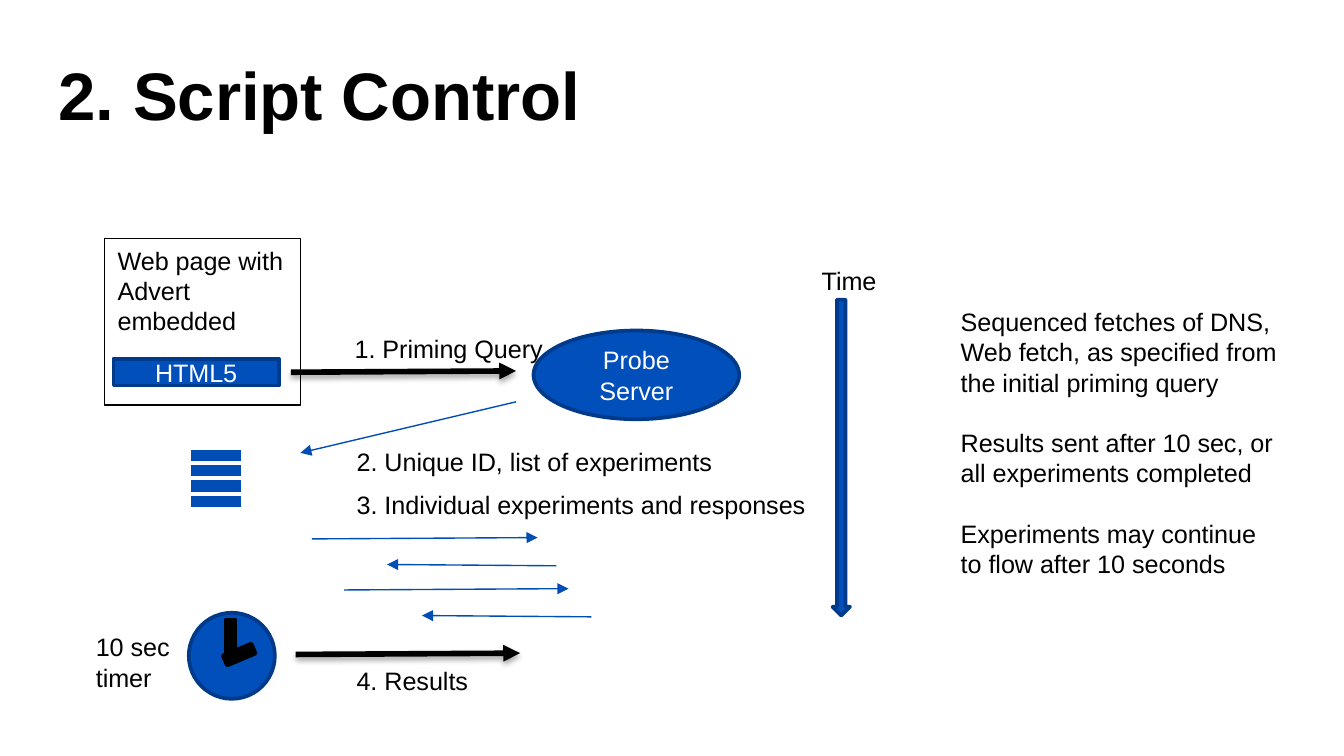
from dataclasses import dataclass

from lxml import etree
from pptx import Presentation
from pptx.dml.color import RGBColor
from pptx.enum.shapes import MSO_CONNECTOR, MSO_SHAPE
from pptx.enum.text import MSO_ANCHOR, PP_ALIGN
from pptx.oxml.ns import qn
from pptx.util import Inches, Pt

LINE = MSO_CONNECTOR.STRAIGHT
RECTANGLE, OVAL, DOWN_ARROW = MSO_SHAPE.RECTANGLE, MSO_SHAPE.OVAL, MSO_SHAPE.DOWN_ARROW
TOP, MIDDLE = MSO_ANCHOR.TOP, MSO_ANCHOR.MIDDLE
LEFT, CENTER = PP_ALIGN.LEFT, PP_ALIGN.CENTER

BLACK = RGBColor(0x00, 0x00, 0x00)
WHITE = RGBColor(0xFF, 0xFF, 0xFF)
BLUE = RGBColor(0x00, 0x4F, 0xBA)
NAVY = RGBColor(0x00, 0x3A, 0x8A)
ARROW_BLUE = RGBColor(0x00, 0x4D, 0xB6)

COLUMNS, ROWS = 100, 56.25
CELL = Inches(0.1)
FONT = "Arial"
BODY_SIZE, BODY_PITCH = 13.5, 16.2


@dataclass
class Area:
    column: float
    row: float
    columns: float
    rows: float

    def lengths(self) -> list[int]:
        return [round(value * CELL) for value in (self.column, self.row, self.columns, self.rows)]


@dataclass
class Label:
    area: Area
    lines: list[str]
    wrap: bool = False
    gap: float = 0


@dataclass
class Arrow:
    start: tuple[float, float]
    end: tuple[float, float]
    heavy: bool = False


LABELS = [
    Label(Area(25.4, 24.3, 16.2, 3.3), ["1. Priming Query"]),
    Label(Area(25.55, 32.7, 28.8, 3.3), ["2. Unique ID, list of experiments"]),
    Label(Area(25.55, 35.9, 35.9, 3.3), ["3. Individual experiments and responses"]),
    Label(Area(25.55, 49, 10.4, 3.3), ["4. Results"]),
    Label(Area(6.15, 46.5, 7.6, 5.6), ["10 sec", "timer"]),
    Label(Area(60.15, 19.25, 6.2, 3.3), ["Time"]),
    Label(Area(70.5, 22.3, 25.6, 23.7), [
        "Sequenced fetches of DNS, Web fetch, as specified from the initial priming query",
        "Results sent after 10 sec, or all experiments completed",
        "Experiments may continue to flow after 10 seconds",
    ], True, BODY_PITCH),
]

ARROWS = [
    Arrow((21.65, 27.7), (38.4, 27.6), True),
    Arrow((38.4, 29.9), (22.35, 33.7)),
    Arrow((23.2, 40.1), (40, 40)),
    Arrow((41.4, 42.1), (28.8, 42)),
    Arrow((25.6, 43.9), (42.3, 43.8)),
    Arrow((44, 45.9), (31.4, 45.8)),
    Arrow((22, 48.7), (38.7, 48.6), True),
]


def write(shape, lines: list[str], color=BLACK, align=LEFT, anchor=TOP,
          wrap=True, gap=0.0, size=BODY_SIZE, bold=False) -> None:
    frame = shape.text_frame
    frame.word_wrap = wrap
    frame.vertical_anchor = anchor
    for index, line in enumerate(lines):
        para = frame.add_paragraph() if index else frame.paragraphs[0]
        para.alignment = align
        if size == BODY_SIZE:
            para.line_spacing = Pt(BODY_PITCH)
        if index and gap:
            para.space_before = Pt(gap)
        span = para.add_run()
        span.text = line
        span.font.name = FONT
        span.font.size = Pt(size)
        span.font.bold = bold
        span.font.color.rgb = color


def add_label(page, label: Label) -> None:
    box = page.shapes.add_textbox(*label.area.lengths())
    write(box, label.lines, wrap=label.wrap, gap=label.gap)


def add_figure(page, kind, area: Area, fill=BLUE, line=NAVY, width=2.0):
    shape = page.shapes.add_shape(kind, *area.lengths())
    shape.shadow.inherit = False
    if fill is None:
        shape.fill.background()
    else:
        shape.fill.solid()
        shape.fill.fore_color.rgb = fill
    shape.line.color.rgb = line
    shape.line.width = Pt(width)
    return shape


def add_line(shapes, start: tuple[float, float], end: tuple[float, float], color, width: float):
    line = shapes.add_connector(LINE, *[round(value * CELL) for value in (*start, *end)])
    line.line.color.rgb = color
    line.line.width = Pt(width)
    effects = etree.SubElement(line._element.spPr, qn("a:effectLst"))
    return line, effects


def add_arrow(page, arrow: Arrow) -> None:
    color, width = (BLACK, 3) if arrow.heavy else (ARROW_BLUE, 0.75)
    line, effects = add_line(page.shapes, arrow.start, arrow.end, color, width)
    etree.SubElement(line.line._get_or_add_ln(), qn("a:tailEnd"), type="triangle")
    if arrow.heavy:
        shadow = etree.SubElement(effects, qn("a:outerShdw"), blurRad=str(Pt(3.1)),
                                  dist=str(Pt(1.8)), dir="5400000", rotWithShape="0")
        shade = etree.SubElement(shadow, qn("a:srgbClr"), val=str(BLACK))
        etree.SubElement(shade, qn("a:alpha"), val="35000")


def add_clock(page) -> None:
    add_figure(page, OVAL, Area(14.05, 45.6, 6.4, 6.4))
    add_figure(page, RECTANGLE, Area(16.8, 46.1, 0.7, 3.2), BLACK, BLACK)
    hand = add_figure(page, RECTANGLE, Area(16.65, 48.3, 2.3, 0.8), BLACK, BLACK)
    hand.rotation = 337.3


def add_task_list(page) -> None:
    group = page.shapes.add_group_shape()
    for index in range(4):
        row = 33.9 + index * 1.13
        add_line(group.shapes, (14.2, row), (17.9, row), ARROW_BLUE, 6)


def main() -> None:
    deck = Presentation()
    deck.slide_width = round(COLUMNS * CELL)
    deck.slide_height = round(ROWS * CELL)
    page = deck.slides.add_slide(deck.slide_layouts[6])

    title = page.shapes.add_textbox(*Area(4.35, 2.3, 91.3, 9.4).lengths())
    frame = title.text_frame
    frame.margin_left = frame.margin_right = frame.margin_top = frame.margin_bottom = 0
    write(title, ["2. Script Control"], anchor=MIDDLE, size=36, bold=True)

    web_page = add_figure(page, RECTANGLE, Area(7.77, 17.75, 14.6, 12.4), None, BLACK, 0.75)
    write(web_page, ["Web page with Advert embedded"])
    advert = add_figure(page, RECTANGLE, Area(8.45, 26.7, 12.3, 2))
    write(advert, ["HTML5"], WHITE, CENTER, MIDDLE)
    server = add_figure(page, OVAL, Area(39.7, 24.6, 15.3, 6.6))
    write(server, ["Probe", "Server"], WHITE, CENTER, MIDDLE)

    for arrow in ARROWS:
        add_arrow(page, arrow)
    add_clock(page)
    for label in LABELS:
        add_label(page, label)
    add_task_list(page)
    add_figure(page, DOWN_ARROW, Area(61.95, 22.3, 1.3, 23.5))

    deck.save("out.pptx")


if __name__ == "__main__":
    main()
